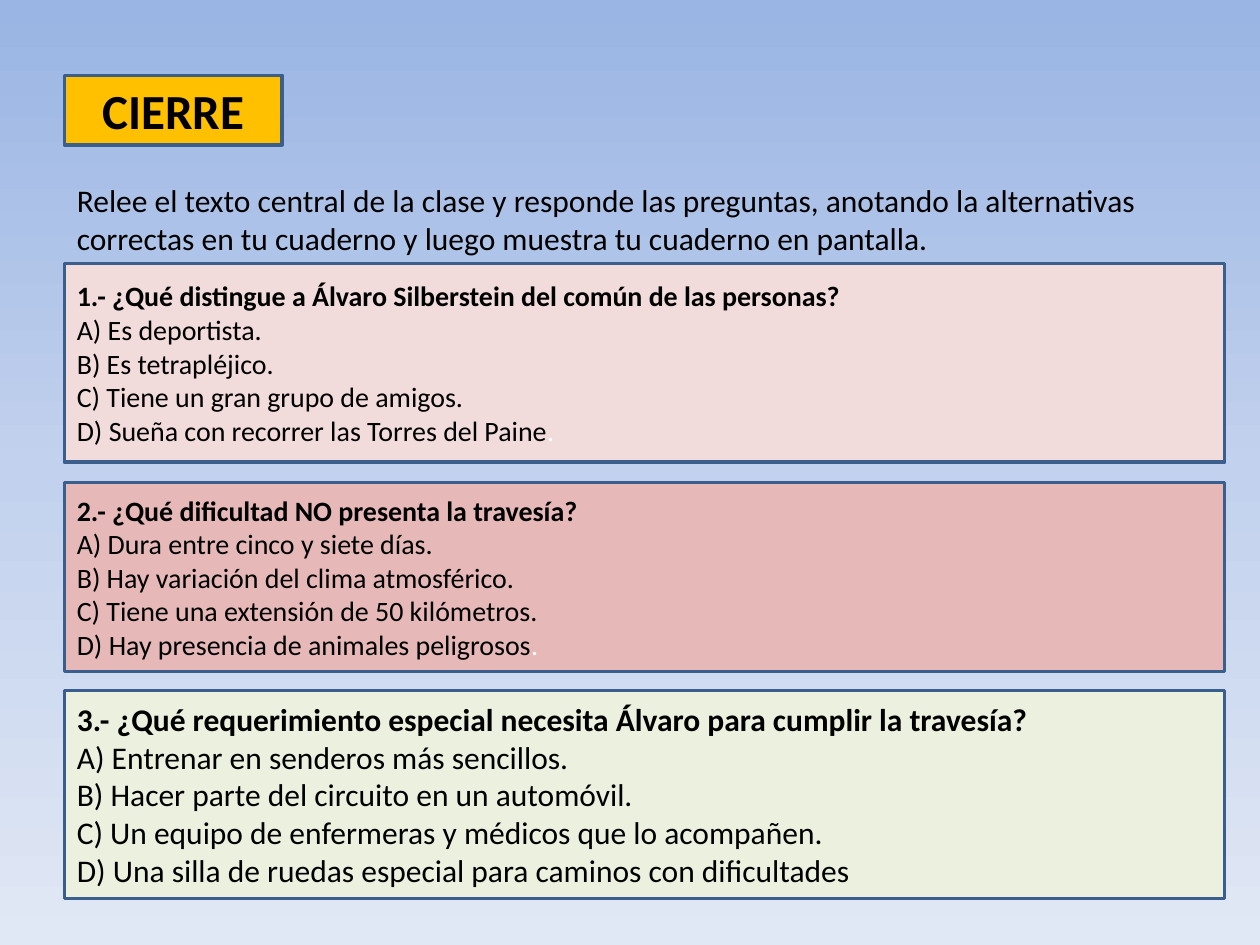
from copy import deepcopy

from pptx import Presentation
from pptx.dml.color import RGBColor
from pptx.enum.shapes import MSO_SHAPE
from pptx.enum.text import MSO_ANCHOR as Anchor, MSO_AUTO_SIZE as AutoSize, PP_ALIGN as Align
from pptx.oxml.ns import qn
from pptx.util import Cm, Pt

COLORS = {
    "text": "000000", "white": "FFFFFF", "border": "3A5F8C",
    "amber": "FFC000", "pink": "F2DCDB", "rose": "E6B9B8", "green": "EBF1DE",
    "sky_top": "9AB5E4", "sky_mid": "C2D1ED", "sky_low": "E1E8F5",
}
LEFT, WIDTH = 1.3, 23.39

INTRO = ("Relee el texto central de la clase y responde las preguntas, anotando la "
         "alternativas correctas en tu cuaderno y luego muestra tu cuaderno en pantalla.")

# top, height, fill, text size, lines, white full stop at the end
QUESTIONS = [
    (5.31, 4.01, "pink", 16, [
        "1.- ¿Qué distingue a Álvaro Silberstein del común de las personas?",
        "A) Es deportista.",
        "B) Es tetrapléjico.",
        "C) Tiene un gran grupo de amigos.",
        "D) Sueña con recorrer las Torres del Paine"], True),
    (9.73, 3.81, "rose", 16, [
        "2.- ¿Qué dificultad NO presenta la travesía?",
        "A) Dura entre cinco y siete días.",
        "B) Hay variación del clima atmosférico.",
        "C) Tiene una extensión de 50 kilómetros.",
        "D) Hay presencia de animales peligrosos"], True),
    (13.92, 4.19, "green", 18, [
        "3.- ¿Qué requerimiento especial necesita Álvaro para cumplir la travesía?",
        "A) Entrenar en senderos más sencillos.",
        "B) Hacer parte del circuito en un automóvil.",
        "C) Un equipo de enfermeras y médicos que lo acompañen.",
        "D) Una silla de ruedas especial para caminos con dificultades"], False),
]


def rgb(name):
    return RGBColor.from_string(COLORS[name])


class SlideBuilder:
    font = "Calibri"
    line_width = Pt(2)

    def __init__(self, prs):
        self.s = prs.slides.add_slide(prs.slide_layouts[5])

    def background(self, *names):
        """Fill the background from top to bottom with evenly spaced colours."""
        fill = self.s.background.fill
        fill.gradient()
        fill.gradient_angle = 270
        stops = self.s.element.find(".//" + qn("a:gsLst"))
        while len(stops) < len(names):
            stops.append(deepcopy(stops[0]))
        for i, (stop, name) in enumerate(zip(fill.gradient_stops, names)):
            stop.position = i / (len(names) - 1)
            stop.color.rgb = rgb(name)

    def style_paragraph(self, p, size, bold=False, align=Align.LEFT):
        p.alignment = align
        p.font.name = self.font
        p.font.size = Pt(size)
        p.font.bold = bold
        p.font.color.rgb = rgb("text")

    def style_box(self, sp, fill):
        sp.fill.solid()
        sp.fill.fore_color.rgb = rgb(fill)
        sp.line.color.rgb = rgb("border")
        sp.line.width = self.line_width
        sp.shadow.inherit = False
        tf = sp.text_frame
        tf.word_wrap = True
        tf.auto_size = AutoSize.NONE
        tf.vertical_anchor = Anchor.MIDDLE

    def title(self, text, top, width, height, fill, size):
        sp = self.s.shapes.title
        sp.left, sp.top, sp.width, sp.height = Cm(LEFT), Cm(top), Cm(width), Cm(height)
        sp.text_frame.text = text
        self.style_box(sp, fill)
        self.style_paragraph(sp.text_frame.paragraphs[0], size, True, Align.CENTER)

    def text(self, text, top, height, size):
        sp = self.s.shapes.add_textbox(Cm(LEFT), Cm(top), Cm(WIDTH), Cm(height))
        tf = sp.text_frame
        tf.word_wrap = True
        tf.auto_size = AutoSize.SHAPE_TO_FIT_TEXT
        tf.text = text
        self.style_paragraph(tf.paragraphs[0], size)

    def question(self, top, height, fill, size, lines, white_stop):
        sp = self.s.shapes.add_shape(MSO_SHAPE.RECTANGLE, Cm(LEFT), Cm(top), Cm(WIDTH), Cm(height))
        self.style_box(sp, fill)
        tf = sp.text_frame
        tf.text = "\n".join(lines)
        for i, p in enumerate(tf.paragraphs):
            self.style_paragraph(p, size, bold=i == 0)
        if white_stop:
            r = tf.paragraphs[-1].add_run()
            r.text = "."
            r.font.color.rgb = rgb("white")


def main():
    prs = Presentation()
    prs.slide_width, prs.slide_height = Cm(25.4), Cm(19.05)
    builder = SlideBuilder(prs)
    builder.background("sky_top", "sky_mid", "sky_low")
    builder.title("CIERRE", 1.52, 4.39, 1.4, "amber", 28)
    builder.text(INTRO, 3.53, 1.8, 18)
    for question in QUESTIONS:
        builder.question(*question)
    prs.save("out.pptx")


if __name__ == "__main__":
    main()
